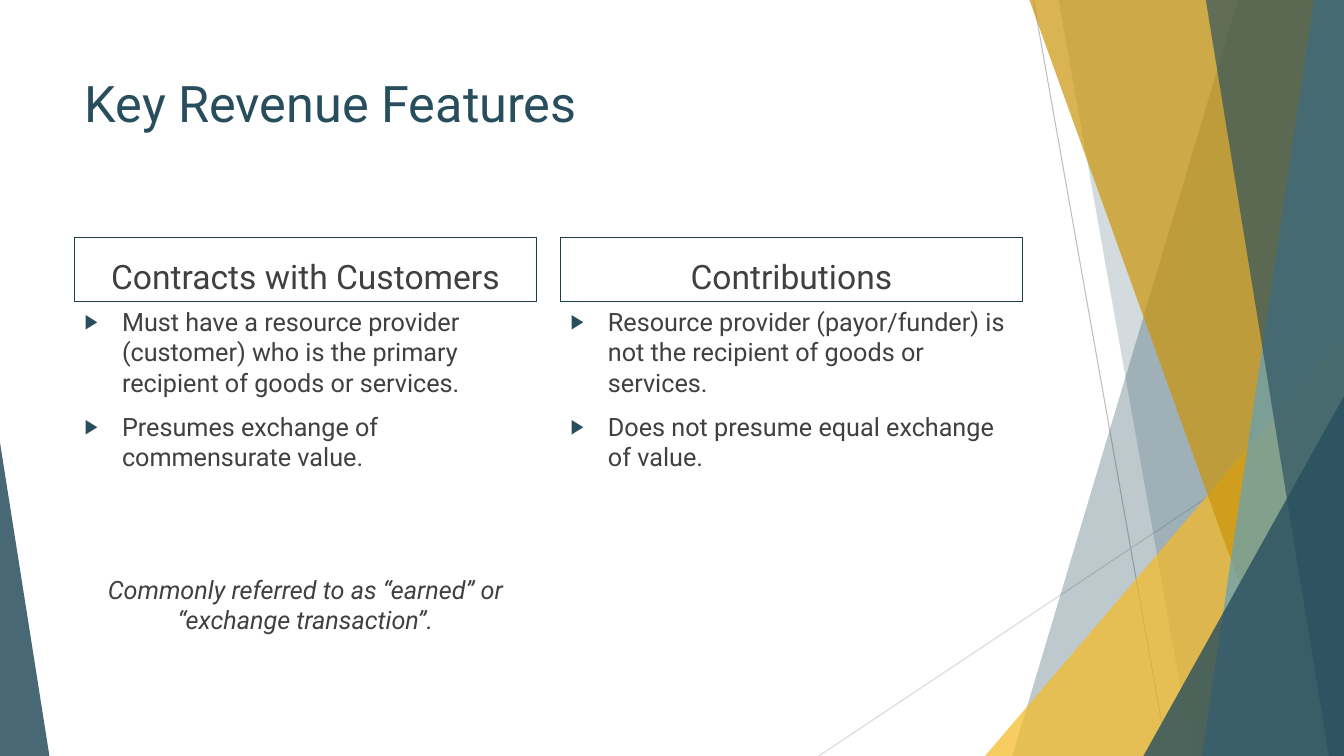
from pptx import Presentation
from pptx.dml.color import RGBColor
from pptx.enum.shapes import MSO_CONNECTOR, MSO_SHAPE
from pptx.enum.text import MSO_ANCHOR, MSO_AUTO_SIZE, PP_ALIGN
from pptx.oxml.ns import qn
from pptx.util import Inches, Pt
from lxml import etree

STRAIGHT = MSO_CONNECTOR.STRAIGHT
TRIANGLE = MSO_SHAPE.ISOSCELES_TRIANGLE
TOP, BOTTOM = MSO_ANCHOR.TOP, MSO_ANCHOR.BOTTOM
LEFT, CENTER = PP_ALIGN.LEFT, PP_ALIGN.CENTER
NO_AUTOFIT = MSO_AUTO_SIZE.NONE

WIDTH, HEIGHT = 13.33, 7.5
MARGIN, CONTENT_WIDTH, GUTTER = 0.74, 9.4, 0.24
COLUMN_WIDTH = (CONTENT_WIDTH - GUTTER) / 2
COLUMN_TOP, COLUMN_HEIGHT, HEADING_HEIGHT = 2.36, 4.24, 0.63
INDENT = 0.37
FONT = "Roboto"
COLORS = {
    "teal": "284E5E", "border": "1E3B46", "text": "404040",
    "gold": "F5BA26", "ochre": "CB9409", "sky": "61A1BC",
    "gray": "BFBFBF", "pale": "D9D9D9",
}

COLUMNS = [
    ("Contracts with Customers",
     ["Must have a resource provider (customer) who is the primary recipient of goods or services.",
      "Presumes exchange of commensurate value."],
     "Commonly referred to as “earned” or “exchange transaction”."),
    ("Contributions",
     ["Resource provider (payor/funder) is not the recipient of goods or services.",
      "Does not presume equal exchange of value."],
     None),
]


def color(name):
    return RGBColor.from_string(COLORS[name])


def paint(shape, name, opacity):
    shape.shadow.inherit = False
    shape.fill.solid()
    shape.fill.fore_color.rgb = color(name)
    shape.line.fill.background()
    tint = shape._element.spPr.find(qn("a:solidFill")).find(qn("a:srgbClr"))
    etree.SubElement(tint, qn("a:alpha"), val=str(opacity * 1000))


def add_ray(slide, start, end, name):
    ray = slide.shapes.add_connector(STRAIGHT, *map(Inches, start + end))
    ray.line.color.rgb = color(name)
    ray.line.width = Pt(0.75)
    etree.SubElement(ray._element.spPr, qn("a:effectLst"))


def add_band(slide, top_x, bottom_x, name, opacity):
    builder = slide.shapes.build_freeform(Inches(top_x), 0)
    corners = [(WIDTH, 0), (WIDTH, HEIGHT), (bottom_x, HEIGHT)]
    builder.add_line_segments([(Inches(x), Inches(y)) for x, y in corners])
    paint(builder.convert_to_shape(), name, opacity)


def add_corner(slide, left, top, width, apex, name, opacity):
    corner = slide.shapes.add_shape(
        TRIANGLE, Inches(left), Inches(top), Inches(width), Inches(HEIGHT - top))
    corner.adjustments[0] = apex
    paint(corner, name, opacity)


def add_backdrop(slide):
    add_ray(slide, (10.25, 0), (11.58, HEIGHT), "gray")
    add_ray(slide, (WIDTH, 4.03), (8.12, HEIGHT), "pale")
    add_band(slide, 12.28, 10.04, "teal", 30)
    add_band(slide, 10.5, 11.83, "teal", 20)
    add_corner(slide, 9.77, 3.33, WIDTH - 9.77, 1, "gold", 72)
    add_band(slide, 10.21, 12.91, "ochre", 70)
    add_band(slide, 13.03, 11.92, "sky", 70)
    add_band(slide, 11.96, 13.18, "teal", 65)
    add_corner(slide, 11.34, 3.93, WIDTH - 11.34, 1, "teal", 80)
    add_corner(slide, 0, 4.39, 0.49, 0, "teal", 85)


def place(slide, shape, box, anchor):
    shape.left, shape.top, shape.width, shape.height = map(Inches, box)
    frame = shape.text_frame
    frame.word_wrap = True
    frame.auto_size = NO_AUTOFIT
    frame.vertical_anchor = anchor
    slide.shapes._spTree.append(shape._element)
    return frame


def style(paragraph, size, name, alignment, before=0, italic=False):
    paragraph.alignment = alignment
    paragraph.line_spacing = 1.0
    paragraph.space_before = Pt(before)
    paragraph.space_after = Pt(0)
    font = paragraph.font
    font.name = FONT
    font.size = Pt(size)
    font.bold = False
    font.italic = italic
    font.color.rgb = color(name)


def set_bullet(paragraph, shown):
    properties = paragraph._p.get_or_add_pPr()
    indent = Inches(INDENT) if shown else 0
    properties.set("marL", str(indent))
    properties.set("indent", str(-indent))
    if not shown:
        etree.SubElement(properties, qn("a:buNone"))
        return
    tint = etree.SubElement(properties, qn("a:buClr"))
    etree.SubElement(tint, qn("a:srgbClr"), val=COLORS["teal"])
    etree.SubElement(properties, qn("a:buSzPct"), val="80000")
    etree.SubElement(properties, qn("a:buFont"), typeface="Arial")
    etree.SubElement(properties, qn("a:buChar"), char="▶")


def fill_title(slide, box):
    frame = place(slide, slide.shapes.title, box, TOP)
    frame.text = "Key Revenue Features"
    style(frame.paragraphs[0], 36, "teal", LEFT)


def fill_column(slide, box, heading_shape, list_shape, heading, points, remark):
    left, top, width, height = box
    frame = place(slide, heading_shape, (left, top, width, HEADING_HEIGHT), BOTTOM)
    frame.text = heading
    set_bullet(frame.paragraphs[0], False)
    style(frame.paragraphs[0], 24, "text", CENTER)
    heading_shape.line.color.rgb = color("border")
    heading_shape.line.width = Pt(0.75)

    list_box = (left, top + HEADING_HEIGHT, width, height - HEADING_HEIGHT)
    frame = place(slide, list_shape, list_box, TOP)
    frame.text = "\n".join(points)
    for index, paragraph in enumerate(frame.paragraphs):
        set_bullet(paragraph, True)
        style(paragraph, 18, "text", LEFT, before=10 if index else 0)
    if remark:
        paragraph = frame.add_paragraph()
        paragraph.text = remark
        set_bullet(paragraph, False)
        style(paragraph, 18, "text", CENTER, before=73, italic=True)


def build_comparison(presentation):
    slide = presentation.slides.add_slide(
        presentation.slide_layouts.get_by_name("Comparison"))
    bodies = list(slide.placeholders)[1:]
    add_backdrop(slide)
    fill_title(slide, (MARGIN, 0.67, CONTENT_WIDTH, 1.44))
    for index, content in enumerate(COLUMNS):
        left = MARGIN + index * (COLUMN_WIDTH + GUTTER)
        box = (left, COLUMN_TOP, COLUMN_WIDTH, COLUMN_HEIGHT)
        fill_column(slide, box, *bodies[2 * index:2 * index + 2], *content)


def main():
    presentation = Presentation()
    presentation.slide_width = Inches(WIDTH)
    presentation.slide_height = Inches(HEIGHT)
    build_comparison(presentation)
    presentation.save("out.pptx")


if __name__ == "__main__":
    main()
